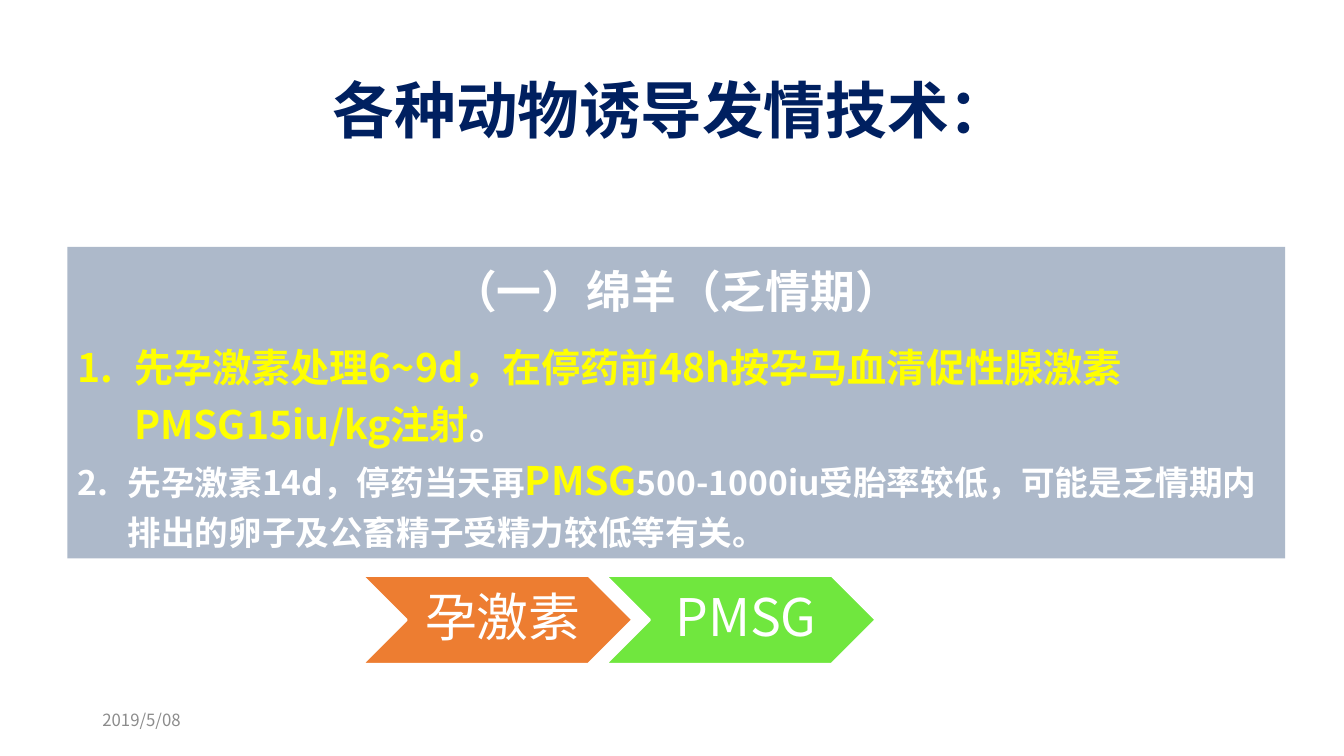
from dataclasses import dataclass

from lxml.etree import SubElement
from pptx import Presentation
from pptx.dml.color import RGBColor
from pptx.enum.shapes import MSO_SHAPE
from pptx.enum.text import MSO_ANCHOR, MSO_AUTO_SIZE, PP_ALIGN
from pptx.oxml.ns import qn
from pptx.util import Cm, Pt


@dataclass(frozen=True)
class Theme:
    font: str = "Noto Sans CJK SC"
    navy: str = "002060"
    grey: str = "8C8C8C"
    panel: str = "ADB9CA"
    white: str = "FFFFFF"
    yellow: str = "FFFF00"
    orange: str = "ED7D31"
    green: str = "70E73E"
    title_size: int = 44
    step_size: int = 37
    heading_size: int = 32
    strong_size: int = 28
    body_size: int = 24
    date_size: int = 12


class SlideBuilder:
    def __init__(self, page, theme):
        self.page = page
        self.theme = theme

    def add_span(self, para, text, size, color, bold=False):
        span = para.add_run()
        span.text = text
        span.font.size = Pt(size)
        span.font.bold = bold
        span.font.color.rgb = RGBColor.from_string(color)
        span.font.name = self.theme.font
        east_asian = SubElement(span.font._element, qn("a:ea"))
        east_asian.set("typeface", self.theme.font)

    def add_label(self, place, text, size, color, bold=False, align=PP_ALIGN.LEFT):
        box = self.page.shapes.add_textbox(*map(Cm, place))
        box.text_frame.word_wrap = True
        box.text_frame.vertical_anchor = MSO_ANCHOR.MIDDLE
        para = box.text_frame.paragraphs[0]
        para.alignment = align
        para.line_spacing = 0.9
        self.add_span(para, text, size, color, bold)

    def add_block(self, kind, place, fill):
        block = self.page.shapes.add_shape(kind, *map(Cm, place))
        block.shadow.inherit = False
        block.fill.solid()
        block.fill.fore_color.rgb = RGBColor.from_string(fill)
        block.line.fill.background()
        block.text_frame.word_wrap = True
        block.text_frame.vertical_anchor = MSO_ANCHOR.MIDDLE
        return block

    def add_panel(self, place, heading, items):
        """Each item is a hanging indent in cm and a list of (text, size, color)."""
        frame = self.add_block(MSO_SHAPE.RECTANGLE, place, self.theme.panel).text_frame
        frame.auto_size = MSO_AUTO_SIZE.SHAPE_TO_FIT_TEXT
        para = frame.paragraphs[0]
        para.alignment = PP_ALIGN.CENTER
        para.line_spacing = 1.2
        para.space_after = Pt(12)
        self.add_span(para, heading, self.theme.heading_size, self.theme.white, bold=True)
        for indent, spans in items:
            para = frame.add_paragraph()
            self.number(para, indent)
            para.alignment = PP_ALIGN.LEFT
            para.line_spacing = 1.2
            for text, size, color in spans:
                self.add_span(para, text, size, color, bold=True)

    def number(self, para, indent):
        properties = para._p.get_or_add_pPr()
        properties.set("marL", str(Cm(indent)))
        properties.set("indent", str(-Cm(indent)))
        SubElement(properties, qn("a:buFont")).set("typeface", "+mj-lt")
        SubElement(properties, qn("a:buAutoNum")).set("type", "arabicPeriod")

    def add_step(self, place, text, fill):
        step = self.add_block(MSO_SHAPE.CHEVRON, place, fill)
        step.line.color.rgb = RGBColor.from_string(self.theme.white)
        step.line.width = Pt(2)
        frame = step.text_frame
        frame.margin_left = Cm(0.4)
        frame.margin_right = Cm(0.13)
        para = frame.paragraphs[0]
        para.alignment = PP_ALIGN.CENTER
        para.line_spacing = 0.9
        self.add_span(para, text, self.theme.step_size, self.theme.white)


def main():
    deck = Presentation()
    deck.slide_width = Cm(33.87)
    deck.slide_height = Cm(19.05)
    theme = Theme()
    slide = SlideBuilder(deck.slides.add_slide(deck.slide_layouts[6]), theme)

    slide.add_label((2.33, 1.01, 29.21, 3.68), "各种动物诱导发情技术：",
                    theme.title_size, theme.navy, True, PP_ALIGN.CENTER)
    slide.add_label((2.33, 17.66, 7.62, 1.01), "2019/5/08", theme.date_size, theme.grey)

    slide.add_panel((1.7, 6.22, 30.69, 7.85), "（一）绵羊（乏情期）", [
        (1.43, [
            ("先孕激素处理6~9d，在停药前48h按孕马血清促性腺激素PMSG15iu/kg注射",
             theme.strong_size, theme.yellow),
            ("。", theme.strong_size, theme.white),
        ]),
        (1.27, [
            ("先孕激素14d，停药当天再", theme.body_size, theme.white),
            ("PMSG", theme.strong_size, theme.yellow),
            ("500-1000iu受胎率较低，可能是乏情期内排出的卵子及公畜精子受精力较低等有关。",
             theme.body_size, theme.white),
        ]),
    ])

    steps = [("孕激素", theme.orange), ("PMSG", theme.green)]
    for index, (text, fill) in enumerate(steps):
        slide.add_step((9.12 + 6.13 * index, 14.5, 6.83, 2.24), text, fill)

    deck.save("out.pptx")


if __name__ == "__main__":
    main()
